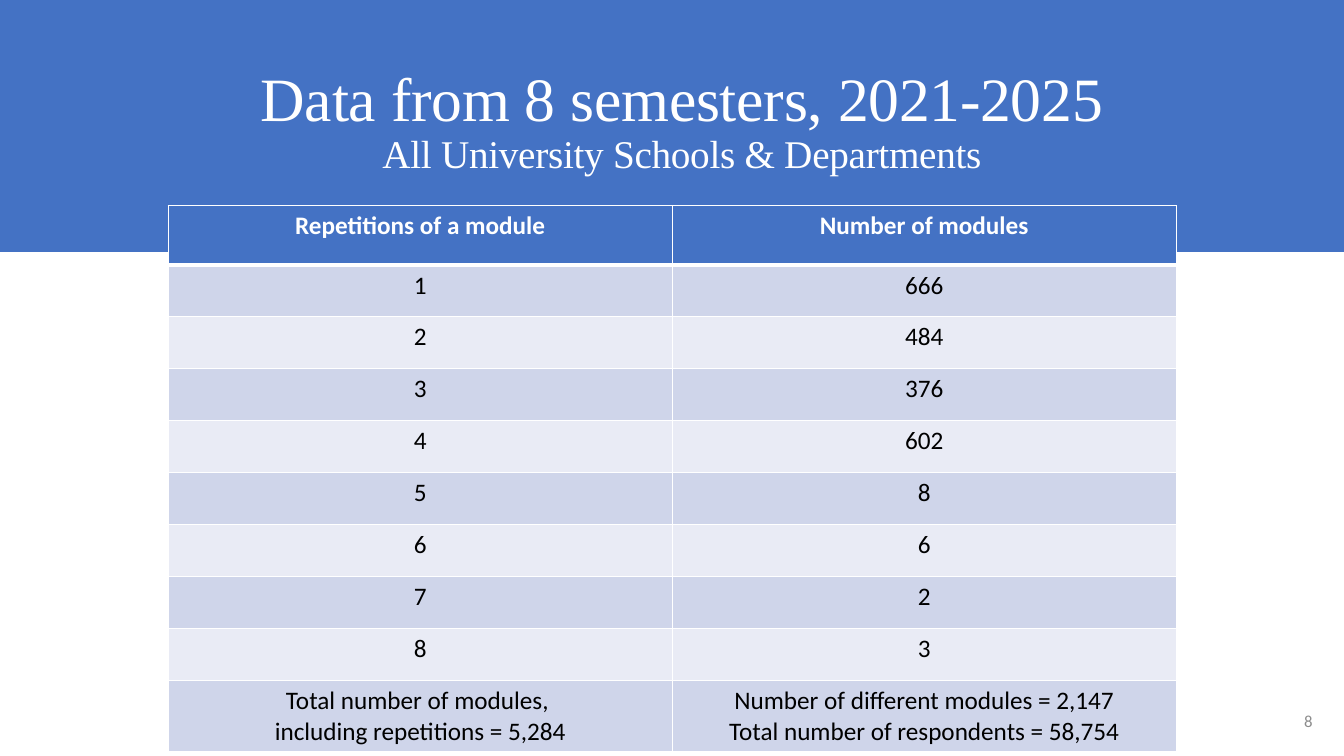
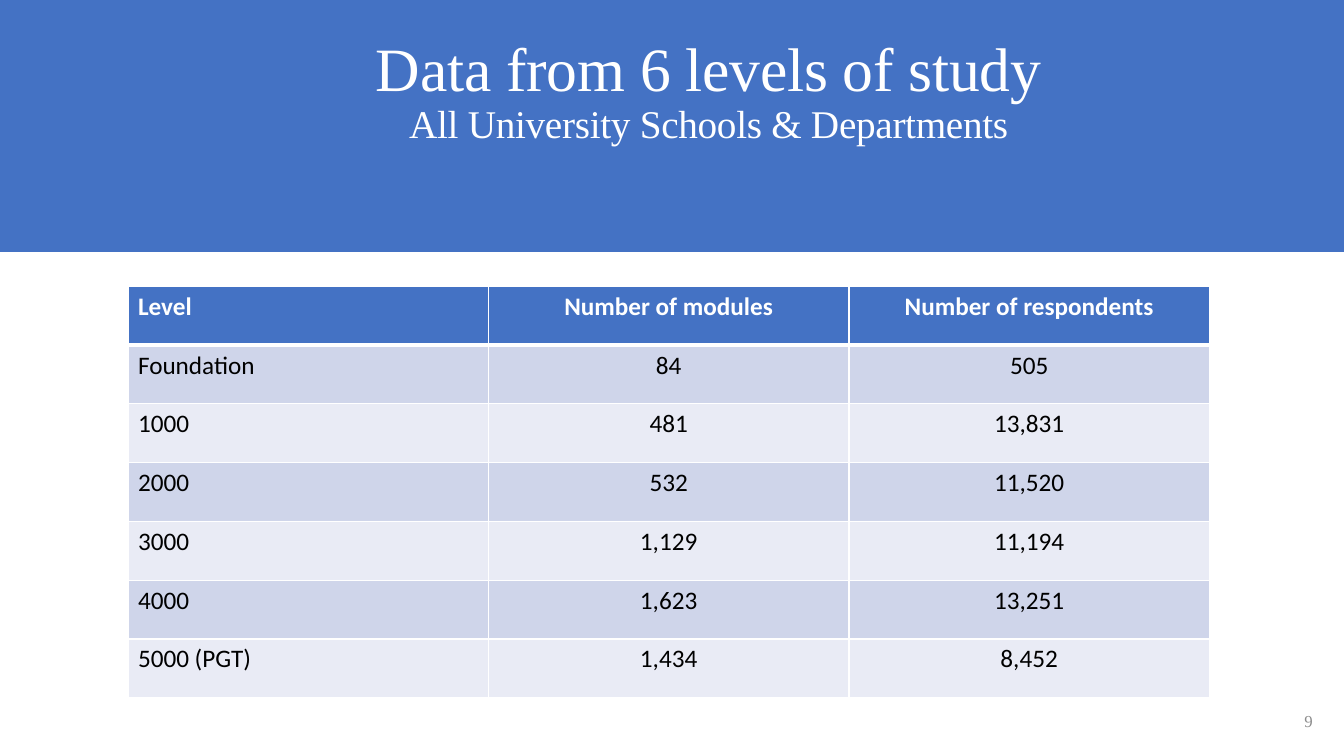
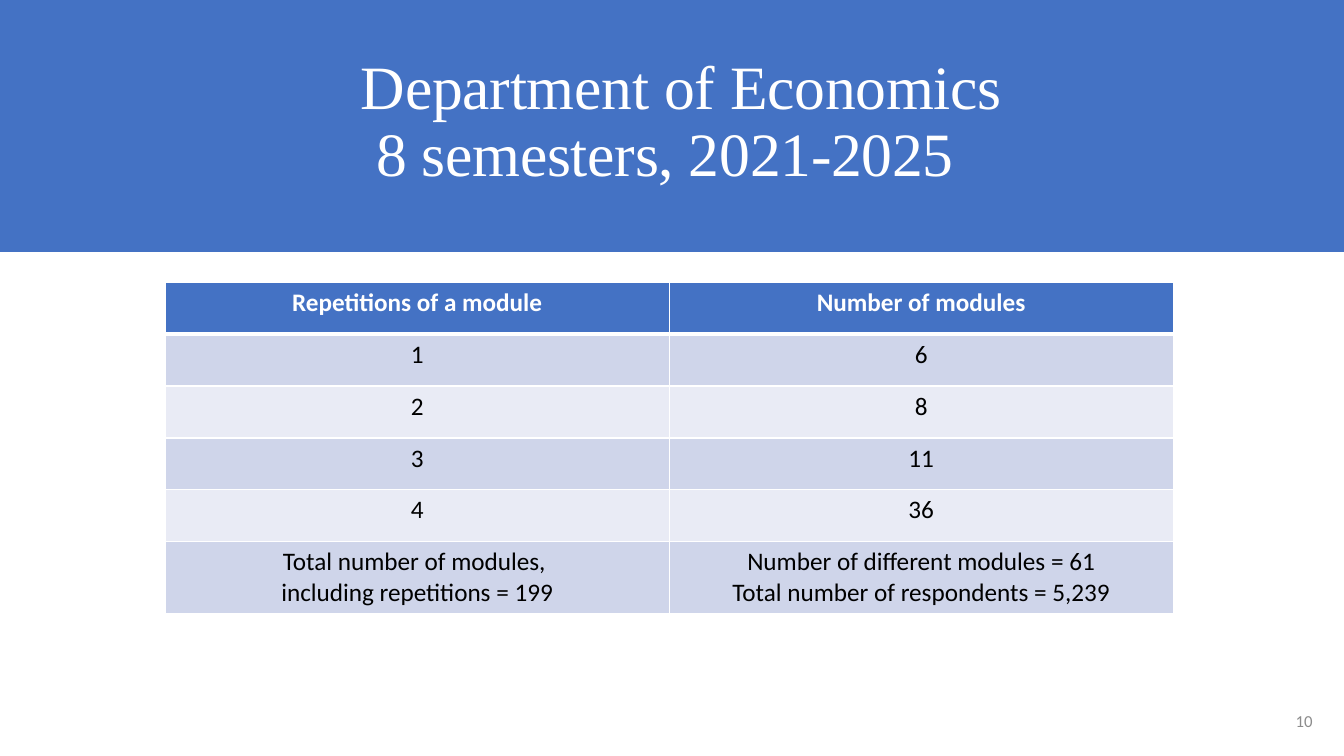
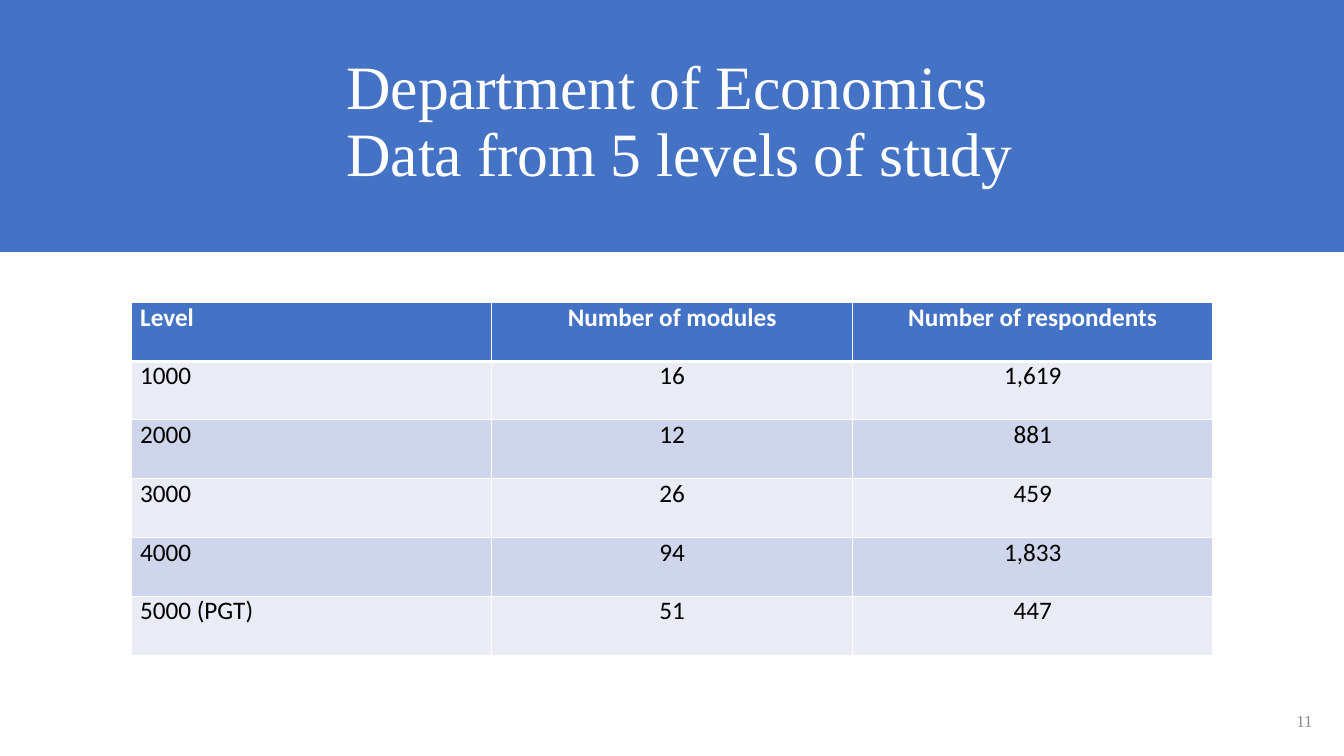
from lxml.etree import SubElement
from pptx import Presentation
from pptx.dml.color import RGBColor
from pptx.enum.shapes import MSO_SHAPE as Preset
from pptx.enum.text import MSO_ANCHOR as Anchor, MSO_AUTO_SIZE as AutoSize, PP_ALIGN as Align
from pptx.oxml.ns import qn
from pptx.util import Pt

# Shared look
BLUE = RGBColor(0x44, 0x72, 0xC4)
BAND_DARK = RGBColor(0xCF, 0xD5, 0xEA)
BAND_LIGHT = RGBColor(0xE9, 0xEB, 0xF5)
WHITE = RGBColor(0xFF, 0xFF, 0xFF)
BLACK = RGBColor(0, 0, 0)
GREY = RGBColor(0x8C, 0x8C, 0x8C)
SERIF, SANS = "Times New Roman", "Calibri"

SLIDE_W, SLIDE_H, BAND_H = 960, 540, 180
TITLE_TOP, TITLE_H = 28.8, 118
ROW_H, TALL_ROW_H, TOTAL_ROW_H = 37.1, 42, 50.9

# Shared wording
MODULE_HEAD = ["Repetitions of a module", "Number of modules"]
LEVEL_HEAD = ["Level", "Number of modules", "Number of respondents"]
ALL_SCHOOLS = "All University Schools & Departments"
ECONOMICS = "Department of Economics"


def set_all(target, formats):
    for name, value in formats.items():
        setattr(target, name, value)


def style_font(font, face, size, color, bold=False):
    set_all(font, {"name": face, "size": Pt(size), "bold": bold})
    font.color.rgb = color


def add_layout_band(slide):
    """Draw the blue band and move it behind everything on the layout."""
    band = slide.shapes.add_shape(Preset.RECTANGLE, 0, 0, Pt(SLIDE_W), Pt(BAND_H))
    band.shadow.inherit = False
    band.fill.solid()
    band.fill.fore_color.rgb = BLUE
    band.line.fill.background()
    slide.slide_layout.element.cSld.spTree.insert(2, band.element)


def set_title(slide, lines, left, width, align=Align.LEFT, top=TITLE_TOP, raised=False):
    """Lines are (wording, size) pairs of one paragraph."""
    title = slide.shapes.title
    set_all(title, {"left": Pt(left), "top": Pt(top), "width": Pt(width), "height": Pt(TITLE_H)})
    frame = title.text_frame
    set_all(frame, {"auto_size": AutoSize.NONE, "word_wrap": True,
                    "vertical_anchor": Anchor.MIDDLE})
    if raised:
        set_all(frame, {"vertical_anchor": Anchor.TOP, "margin_top": 0})
    paragraph = frame.paragraphs[0]
    set_all(paragraph, {"alignment": align, "line_spacing": 0.9})
    for index, (wording, size) in enumerate(lines):
        if index:
            paragraph.add_line_break()
        run = paragraph.add_run()
        run.text = wording
        style_font(run.font, SERIF, size, WHITE)
        run.font._element.set("spc", "-20")


def add_page_number(slide, number, face):
    box = slide.shapes.add_textbox(Pt(895), Pt(500.4), Pt(49.7), Pt(28.8))
    set_all(box.text_frame, {"word_wrap": True, "vertical_anchor": Anchor.MIDDLE})
    paragraph = box.text_frame.paragraphs[0]
    paragraph.alignment = Align.RIGHT
    run = paragraph.add_run()
    run.text = str(number)
    style_font(run.font, face, 12, GREY)


def set_borders(cell, line, top, bottom):
    """Give a cell white edges; the fill must already be set."""
    properties = cell._tc.get_or_add_tcPr()
    edges = {"a:lnL": line, "a:lnR": line, "a:lnT": top, "a:lnB": bottom}
    for place, (tag, width) in enumerate(edges.items()):
        edge = SubElement(properties, qn(tag), w=str(Pt(width)))
        fill = SubElement(edge, qn("a:solidFill"))
        SubElement(fill, qn("a:srgbClr"), val=str(WHITE))
        properties.insert(place, edge)


def add_data_table(slide, rows, left, top, column_w, heights, bands=(BAND_DARK, BAND_LIGHT),
                   line=1, cell_format=None, line_spacing=None):
    """Columns are centred, except a leading Level column."""
    columns = len(rows[0])
    table = slide.shapes.add_table(len(rows), columns, Pt(left), Pt(top),
                                   Pt(column_w * columns), Pt(sum(heights))).table
    table.horz_banding = False
    for column in table.columns:
        column.width = Pt(column_w)
    for r, (wordings, height) in enumerate(zip(rows, heights)):
        table.rows[r].height = Pt(height)
        is_head = r == 0
        for c, wording in enumerate(wordings):
            cell = table.cell(r, c)
            cell.fill.solid()
            cell.fill.fore_color.rgb = BLUE if is_head else bands[(r - 1) % 2]
            set_borders(cell, line, line * 3 if r == 1 else line, line * 3 if is_head else line)
            set_all(cell, cell_format or {})
            cell.text = wording
            level_column = c == 0 and rows[0][0] == "Level"
            for paragraph in cell.text_frame.paragraphs:
                set_all(paragraph, {"alignment": Align.LEFT if level_column else Align.CENTER,
                                    "line_spacing": line_spacing})
                for run in paragraph.runs:
                    style_font(run.font, SANS, 18, WHITE if is_head else BLACK, is_head)


def module_rows(counts, total, different, respondents):
    """Number the repetition counts and close with the totals."""
    return [MODULE_HEAD,
            *([str(n), str(count)] for n, count in enumerate(counts, 1)),
            [f"Total number of modules, \nincluding repetitions = {total:,}",
             f"Number of different modules = {different:,}\n"
             f"Total number of respondents = {respondents:,}"]]


def level_rows(levels):
    return [LEVEL_HEAD, *([name, f"{modules:,}", f"{respondents:,}"]
                          for name, modules, respondents in levels)]


def main():
    prs = Presentation()
    set_all(prs, {"slide_width": Pt(SLIDE_W), "slide_height": Pt(SLIDE_H)})
    semesters, levels, economics, economics_levels = slides = [
        prs.slides.add_slide(prs.slide_layouts[5]) for _ in range(4)]
    add_layout_band(semesters)

    # All schools, by semester
    set_title(semesters, [("Data from 8 semesters, 2021-2025", 44), (ALL_SCHOOLS, 28)],
              172.8, 628.6, Align.CENTER)
    rows = module_rows([666, 484, 376, 602, 8, 6, 2, 3], 5284, 2147, 58754)
    add_data_table(semesters, rows, 120.2, 146.9, 360, [42.4] + [ROW_H] * 8 + [TOTAL_ROW_H])

    # All schools, by level
    set_title(levels, [("Data from 6 levels of study", 44), (ALL_SCHOOLS, 28)],
              211.7, 589, Align.CENTER, top=27, raised=True)
    rows = level_rows([("Foundation", 84, 505), ("1000", 481, 13831), ("2000", 532, 11520),
                       ("3000", 1129, 11194), ("4000", 1623, 13251), ("5000 (PGT)", 1434, 8452)])
    add_data_table(levels, rows, 91.4, 204.5, 257.5, [TALL_ROW_H] * 7)

    # Economics, by semester
    set_title(economics, [(ECONOMICS, 44), (" 8 semesters, 2021-2025", 44)], 250.6, 625)
    rows = module_rows([6, 8, 11, 36], 199, 61, 5239)
    add_data_table(economics, rows, 118, 201.6, 360, [ROW_H] * 5 + [TOTAL_ROW_H])

    # Economics, by level
    set_title(economics_levels, [(ECONOMICS, 44), ("Data from 5 levels of study", 44)], 240.5, 654.5)
    rows = level_rows([("1000", 16, 1619), ("2000", 12, 881), ("3000", 26, 459),
                       ("4000", 94, 1833), ("5000 (PGT)", 51, 447)])
    tight = {"margin_left": Pt(6.2), "margin_right": Pt(6.2),
             "margin_top": Pt(3.1), "margin_bottom": Pt(3.1)}
    add_data_table(economics_levels, rows, 93.9, 216, 257.5, [TALL_ROW_H] * 6,
                   (BAND_LIGHT, BAND_DARK), 0.86, tight, Pt(18.6))

    # Page numbers
    for number, (slide, face) in enumerate(zip(slides, [SANS, SERIF] * 2), 8):
        add_page_number(slide, number, face)

    prs.save("out.pptx")


if __name__ == "__main__":
    main()
